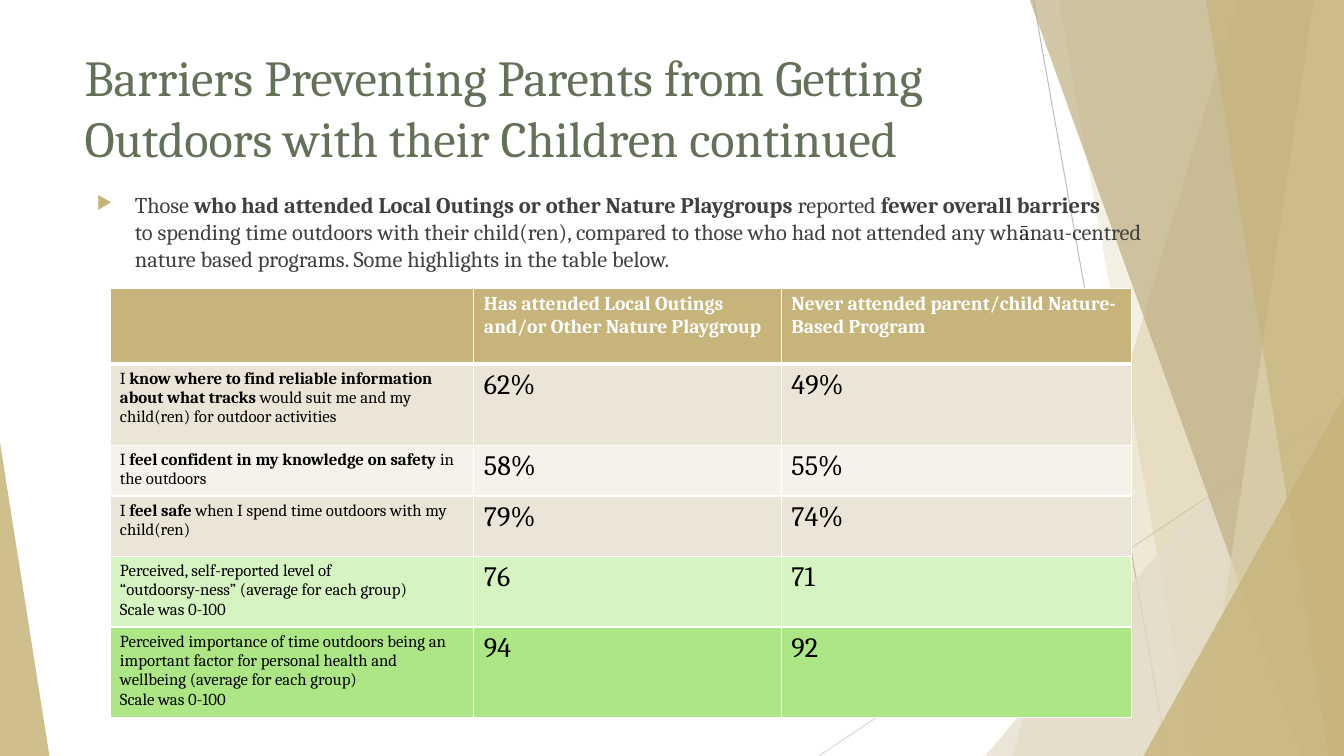
from dataclasses import dataclass

from lxml.etree import SubElement
from pptx import Presentation
from pptx.dml.color import RGBColor
from pptx.enum.shapes import MSO_CONNECTOR, MSO_SHAPE
from pptx.enum.text import MSO_ANCHOR
from pptx.oxml import parse_xml
from pptx.oxml.ns import nsdecls, qn
from pptx.util import Inches, Pt


@dataclass(frozen=True)
class Theme:
    """Colours, font and type sizes of the slide."""
    font: str = "Cambria"
    title: str = "657058"
    body: str = "404040"
    macron: str = "1F1F1F"
    black: str = "000000"
    white: str = "FFFFFF"
    gold: str = "C7B47A"
    sand: str = "E2DBC7"
    khaki: str = "BEAE81"
    straw: str = "DDD2AF"
    dark_line: str = "BFBFBF"
    light_line: str = "D9D9D9"
    row_dark: str = "EBE5D7"
    row_light: str = "F5F2EC"
    green_light: str = "D6F3C2"
    green: str = "ADE785"
    title_size: int = 36
    body_size: int = 16
    header_size: int = 14
    label_size: int = 12
    value_size: int = 20


THEME = Theme()

TITLE = "Barriers Preventing Parents from Getting Outdoors with their Children continued"
FINDING = [
    ("Those ", {}),
    ("who had attended Local Outings or other Nature Playgroups ", {"bold": True}),
    ("reported ", {}),
    ("fewer overall barriers \n", {"bold": True}),
    ("to spending time outdoors with their child(ren), compared to those who had not "
     "attended any wh", {}),
    ("ā", {"color": THEME.macron}),
    ("nau-centred nature based programs. Some highlights in the table below.", {}),
]
HEADERS = ["", "Has attended Local Outings and/or Other Nature Playgroup",
           "Never attended parent/child Nature-Based Program"]
ROWS = [
    ([("I ", {}),
      ("know where to find reliable information about what tracks ", {"bold": True}),
      ("would suit me and my child(ren) for outdoor activities", {})],
     "62%", "49%", THEME.row_dark),
    ([("I ", {}), ("feel confident in my knowledge on safety ", {"bold": True}),
      ("in the outdoors", {})], "58%", "55%", THEME.row_light),
    ([("I ", {}), ("feel safe ", {"bold": True}),
      ("when I spend time outdoors with my child(ren)", {})],
     "79%", "74%", THEME.row_dark),
    ("Perceived, self-reported level of \n“outdoorsy-ness” (average for each group)\n"
     "Scale was 0-100", "76", "71", THEME.green_light),
    ("Perceived importance of time outdoors being an important factor for personal "
     "health and wellbeing (average for each group)\nScale was 0-100",
     "94", "92", THEME.green),
]
COLUMN_WIDTHS = [3.61, 3.05, 3.47]
ROW_HEIGHTS = [0.75, 0.81, 0.5, 0.6, 0.6, 0.6]


def write_text(frame, text, size, color, bold=False):
    """Write a string, or a list of (text, overrides) runs, as one paragraph."""
    frame.word_wrap = True
    paragraph = frame.paragraphs[0]
    for content, changes in [(text, {})] if isinstance(text, str) else text:
        for index, line in enumerate(content.split("\n")):
            if index:
                paragraph.add_line_break()
            if not line:
                continue
            run = paragraph.add_run()
            run.text = line
            run.font.name = THEME.font
            run.font.size = Pt(size)
            run.font.bold = changes.get("bold", bold)
            run.font.color.rgb = RGBColor.from_string(changes.get("color", color))
    return paragraph


def fill_shape(shape, color, opacity):
    """Give a shape a translucent fill without line or shadow."""
    shape.shadow.inherit = False
    shape.line.fill.background()
    shape.fill.solid()
    shape.fill.fore_color.rgb = RGBColor.from_string(color)
    color_element = shape._element.spPr.find(qn("a:solidFill"))[0]
    SubElement(color_element, qn("a:alpha"), val=str(opacity * 1000))


def add_line(slide, start, end, color):
    """Draw a thin straight line."""
    line = slide.shapes.add_connector(
        MSO_CONNECTOR.STRAIGHT, *(Inches(value) for value in (*start, *end)))
    line.line.color.rgb = RGBColor.from_string(color)
    line.line.width = Pt(0.75)
    SubElement(line._element.spPr, qn("a:effectLst"))


def add_band(slide, right, bottom, top_x, bottom_x, color, opacity):
    """Draw a full-height band with a slanted left side up to the right edge."""
    builder = slide.shapes.build_freeform(Inches(top_x), Inches(-0.01))
    corners = [(right, -0.01), (right, bottom), (bottom_x, bottom)]
    builder.add_line_segments([(Inches(x), Inches(y)) for x, y in corners])
    fill_shape(builder.convert_to_shape(), color, opacity)


def add_corner(slide, left, bottom, width, height, peak, color, opacity):
    """Draw a triangle standing on the bottom edge, its peak at a side."""
    triangle = slide.shapes.add_shape(
        MSO_SHAPE.ISOSCELES_TRIANGLE, Inches(left), Inches(bottom - height),
        Inches(width), Inches(height))
    triangle.adjustments[0] = peak
    fill_shape(triangle, color, opacity)


def add_background(slide, left, top, width, height):
    """Draw the facets along both sides of the slide."""
    right, bottom = left + width, top + height
    add_line(slide, (right - 3.08, top), (right - 1.75, bottom), THEME.dark_line)
    add_line(slide, (right, top + 4.03), (right - 5.21, bottom), THEME.light_line)
    add_band(slide, right, bottom, right - 1.05, right - 3.29, THEME.gold, 30)
    add_band(slide, right, bottom, right - 2.83, right - 1.5, THEME.gold, 20)
    add_corner(slide, right - 3.56, bottom, 3.56, 4.17, 1, THEME.sand, 72)
    add_band(slide, right, bottom, right - 3.12, right - 0.42, THEME.khaki, 70)
    add_band(slide, right, bottom, right - 0.3, right - 1.41, THEME.straw, 70)
    add_band(slide, right, bottom, right - 1.37, right - 0.15, THEME.gold, 65)
    add_corner(slide, right - 1.99, bottom, 1.99, 3.57, 1, THEME.gold, 80)
    add_corner(slide, left, bottom, 0.49, 3.11, 0, THEME.gold, 85)


def add_text_box(slide, box, text, size, color):
    """Add a top-anchored text box and return its paragraph."""
    frame = slide.shapes.add_textbox(*(Inches(value) for value in box)).text_frame
    frame.vertical_anchor = MSO_ANCHOR.TOP
    return write_text(frame, text, size=size, color=color)


def add_finding(slide, *box):
    """Add the bulleted statement above the table."""
    paragraph = add_text_box(slide, box, FINDING, THEME.body_size, THEME.body)
    paragraph.space_before = Pt(10)
    properties = paragraph._p.get_or_add_pPr()
    properties.set("marL", str(Inches(0.5)))
    properties.set("indent", str(Inches(-0.38)))
    bullet_color = SubElement(properties, qn("a:buClr"))
    SubElement(bullet_color, qn("a:srgbClr"), val=THEME.gold)
    SubElement(properties, qn("a:buSzPct"), val="80000")
    SubElement(properties, qn("a:buChar"), char="▶")


def format_cell(cell, text, fill, bottom_width=1, **text_format):
    """Write a table cell with its fill and white borders."""
    write_text(cell.text_frame, text, **text_format)
    cell.fill.solid()
    cell.fill.fore_color.rgb = RGBColor.from_string(fill)
    properties = cell._tc.get_or_add_tcPr()
    for index, side in enumerate("LRTB"):
        width = Pt(bottom_width if side == "B" else 1)
        properties.insert(index, parse_xml(
            f'<a:ln{side} {nsdecls("a")} w="{width}"><a:solidFill>'
            f'<a:srgbClr val="{THEME.white}"/></a:solidFill></a:ln{side}>'))


def add_comparison_table(slide, left, top, width, height):
    """Add the table that compares attendees with non-attendees."""
    table = slide.shapes.add_table(
        len(ROW_HEIGHTS), len(COLUMN_WIDTHS),
        Inches(left), Inches(top), Inches(width), Inches(height)).table
    for column, column_width in zip(table.columns, COLUMN_WIDTHS):
        column.width = Inches(column_width)
    for row, row_height in zip(table.rows, ROW_HEIGHTS):
        row.height = Inches(row_height)
    for column, header in enumerate(HEADERS):
        format_cell(table.cell(0, column), header, THEME.gold, bottom_width=3,
                    size=THEME.header_size, color=THEME.white, bold=True)
    for row, (*texts, fill) in enumerate(ROWS, start=1):
        for column, text in enumerate(texts):
            size = THEME.value_size if column else THEME.label_size
            format_cell(table.cell(row, column), text, fill, size=size, color=THEME.black)


def main():
    """Build the slide and save it."""
    presentation = Presentation()
    presentation.slide_width, presentation.slide_height = Inches(13.33), Inches(7.5)
    slide = presentation.slides.add_slide(presentation.slide_layouts[6])
    add_background(slide, 0, 0, 13.33, 7.5)
    add_text_box(slide, (0.74, 0.41, 9.4, 1.44), TITLE, THEME.title_size, THEME.title)
    add_finding(slide, 0.74, 1.85, 10.84, 5.49)
    add_comparison_table(slide, 1.09, 2.86, 10.14, 4.31)
    presentation.save("out.pptx")


if __name__ == "__main__":
    main()
